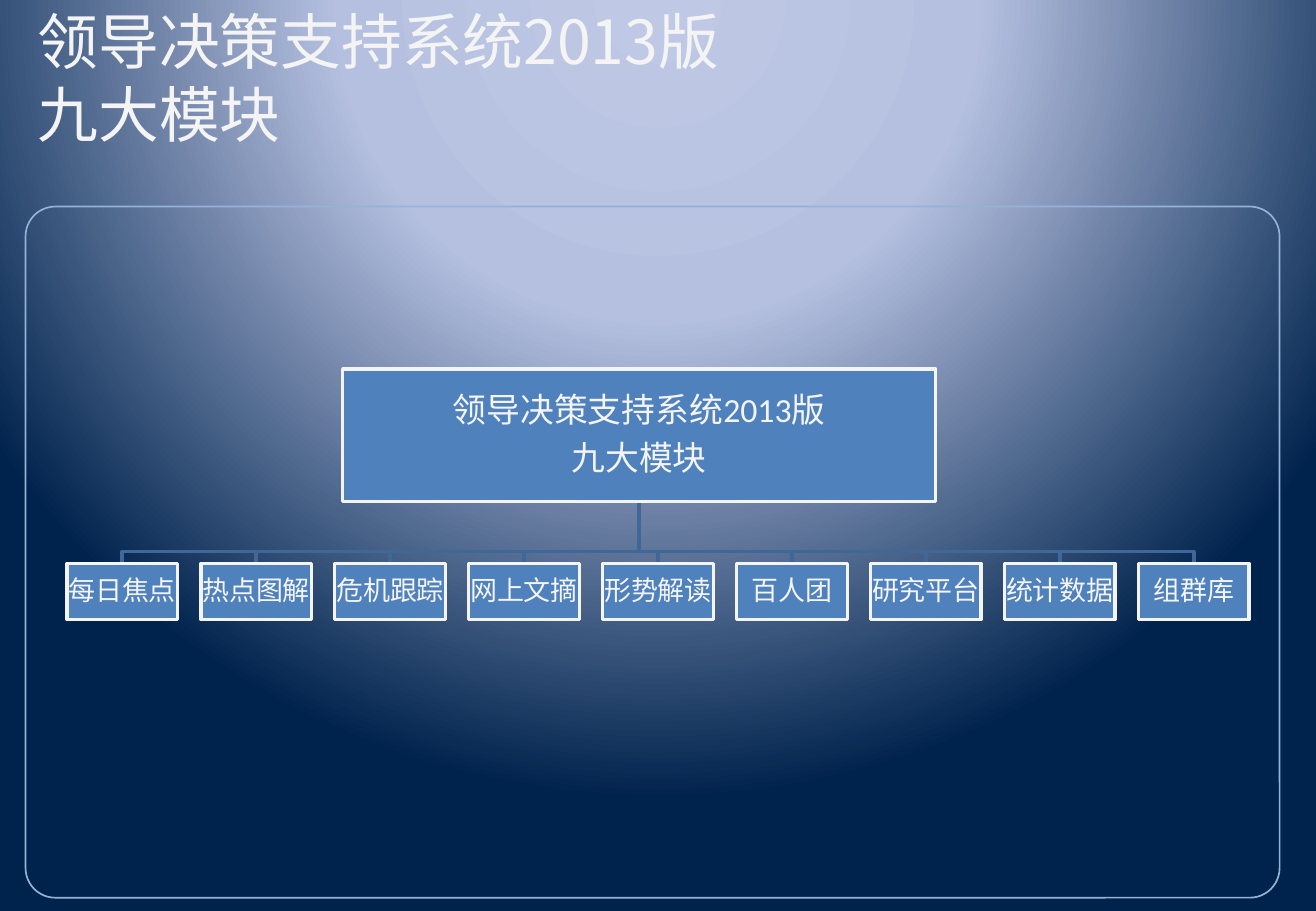
from dataclasses import dataclass
from lxml.etree import SubElement
from pptx import Presentation
from pptx.dml.color import RGBColor
from pptx.enum.shapes import MSO_SHAPE
from pptx.enum.text import MSO_ANCHOR, PP_ALIGN
from pptx.oxml import parse_xml
from pptx.oxml.ns import nsdecls, qn
from pptx.util import Inches, Pt

WIDE, HIGH = Inches(10.83), Inches(7.5)


@dataclass(frozen=True)
class Theme:
    ink: str = "F4F4F4"
    box: str = "4F81BD"
    branch: str = "3F6797"
    frame: str = "95B3D7"
    glow: tuple = ((0, "BFC9E5"), (40, "B5C0E0"), (100, "00234D"))
    head: str = "Noto Sans CJK SC"
    body: str = "Calibri"
    title: int = 36
    root: int = 20
    leaf: int = 16


THEME = Theme()
TITLE = ("领导决策支持系统2013版", "九大模块")
LEAVES = ("每日焦点", "热点图解", "危机跟踪", "网上文摘", "形势解读",
          "百人团", "研究平台", "统计数据", "组群库")

# Places in percent of the slide: left, top, width, height
PANEL = (1.94, 22.67, 95.29, 75.87)
HEAD = (1.94, 0.4, 95.29, 16)
ROOT = (26.04, 40.53, 45.06, 14.53)
LEAF = (5.08, 61.87, 8.4, 6.13)
STEP = 10.18  # from one leaf to the next
BAR = 60.53   # height at which the branches turn


def across(share):
    return round(WIDE * share / 100)


def down(share):
    return round(HIGH * share / 100)


def place(area):
    x, y, w, h = area
    return across(x), down(y), across(w), down(h)


def stroke(shape, color, width):
    shape.shadow.inherit = False
    shape.line.color.rgb = RGBColor.from_string(color)
    shape.line.width = Pt(width)


def style(part, face, size):
    for run in part.runs:
        run.font.name = face
        run.font.size = Pt(size)
        run.font.color.rgb = RGBColor.from_string(THEME.ink)


def backdrop(slide):
    stops = "".join(
        f'<a:gs pos="{pos * 1000}"><a:srgbClr val="{color}"/></a:gs>'
        for pos, color in THEME.glow)
    slide.background.fill.gradient()
    old = next(slide.element.iter(qn("a:gradFill")))
    old.getparent().replace(old, parse_xml(
        f'<a:gradFill {nsdecls("a")} rotWithShape="1"><a:gsLst>{stops}</a:gsLst>'
        '<a:path path="circle"><a:fillToRect l="50000" t="-80000" '
        'r="50000" b="180000"/></a:path></a:gradFill>'))


def panel(slide):
    shape = slide.shapes.add_shape(MSO_SHAPE.ROUNDED_RECTANGLE, *place(PANEL))
    shape.adjustments[0] = 0.043
    shape.fill.background()
    stroke(shape, THEME.frame, 1)


def cast(run):
    """Give the letters of a run a soft shadow."""
    props = run.font.fill._xPr
    fill = props.find(qn("a:solidFill"))
    fill.addnext(parse_xml(
        f'<a:effectLst {nsdecls("a")}><a:outerShdw blurRad="38100" dist="38100" '
        'dir="2700000" algn="tl"><a:srgbClr val="000000"><a:alpha val="60000"/>'
        '</a:srgbClr></a:outerShdw></a:effectLst>'))
    SubElement(props, qn("a:ea")).set("typeface", THEME.head)


def heading(slide):
    frame = slide.shapes.add_textbox(*place(HEAD)).text_frame
    frame.word_wrap = True
    frame.vertical_anchor = MSO_ANCHOR.MIDDLE
    frame.margin_top = frame.margin_bottom = 0
    frame.text = "\n".join(TITLE)
    for part in frame.paragraphs:
        part.line_spacing = Pt(THEME.title * 1.2)
        style(part, THEME.head, THEME.title)
        for run in part.runs:
            cast(run)


def branch(slide, end):
    start = ROOT[0] + ROOT[2] / 2
    top = ROOT[1] + ROOT[3]
    pen = slide.shapes.build_freeform(across(start), down(top))
    turns = ((start, BAR), (end, BAR), (end, LEAF[1]))
    pen.add_line_segments([(across(x), down(y)) for x, y in turns], close=False)
    shape = pen.convert_to_shape()
    shape.fill.background()
    stroke(shape, THEME.branch, 2)


def node(slide, area, lines, size):
    shape = slide.shapes.add_shape(MSO_SHAPE.RECTANGLE, *place(area))
    shape.fill.solid()
    shape.fill.fore_color.rgb = RGBColor.from_string(THEME.box)
    stroke(shape, THEME.ink, 2)
    frame = shape.text_frame
    frame.word_wrap = False
    frame.vertical_anchor = MSO_ANCHOR.MIDDLE
    frame.margin_left = frame.margin_right = Inches(0.01)
    frame.margin_top = frame.margin_bottom = Inches(0.01)
    frame.text = "\n".join(lines)
    for part in frame.paragraphs:
        part.alignment = PP_ALIGN.CENTER
        part.line_spacing = 0.9
        part.space_after = Pt(size * 0.35)
        style(part, THEME.body, size)


def main():
    deck = Presentation()
    deck.slide_width, deck.slide_height = WIDE, HIGH
    slide = deck.slides.add_slide(deck.slide_layouts[6])

    # Background, frame and title
    backdrop(slide)
    panel(slide)
    heading(slide)

    # Tree: branches behind, then the root and its leaves
    left, top, width, height = LEAF
    spots = [left + STEP * i for i in range(len(LEAVES))]
    for spot in spots:
        branch(slide, spot + width / 2)
    node(slide, ROOT, TITLE, THEME.root)
    for spot, name in zip(spots, LEAVES):
        node(slide, (spot, top, width, height), (name,), THEME.leaf)

    deck.save("out.pptx")


if __name__ == "__main__":
    main()
